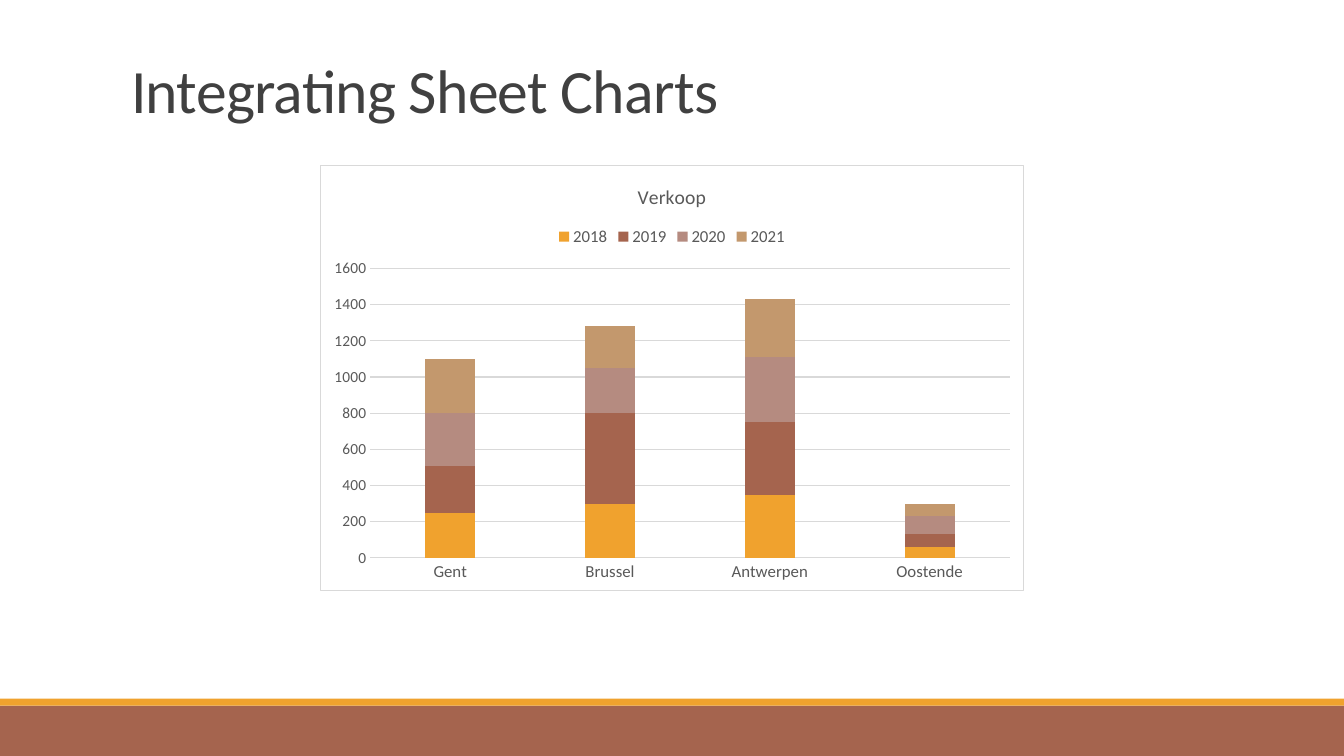
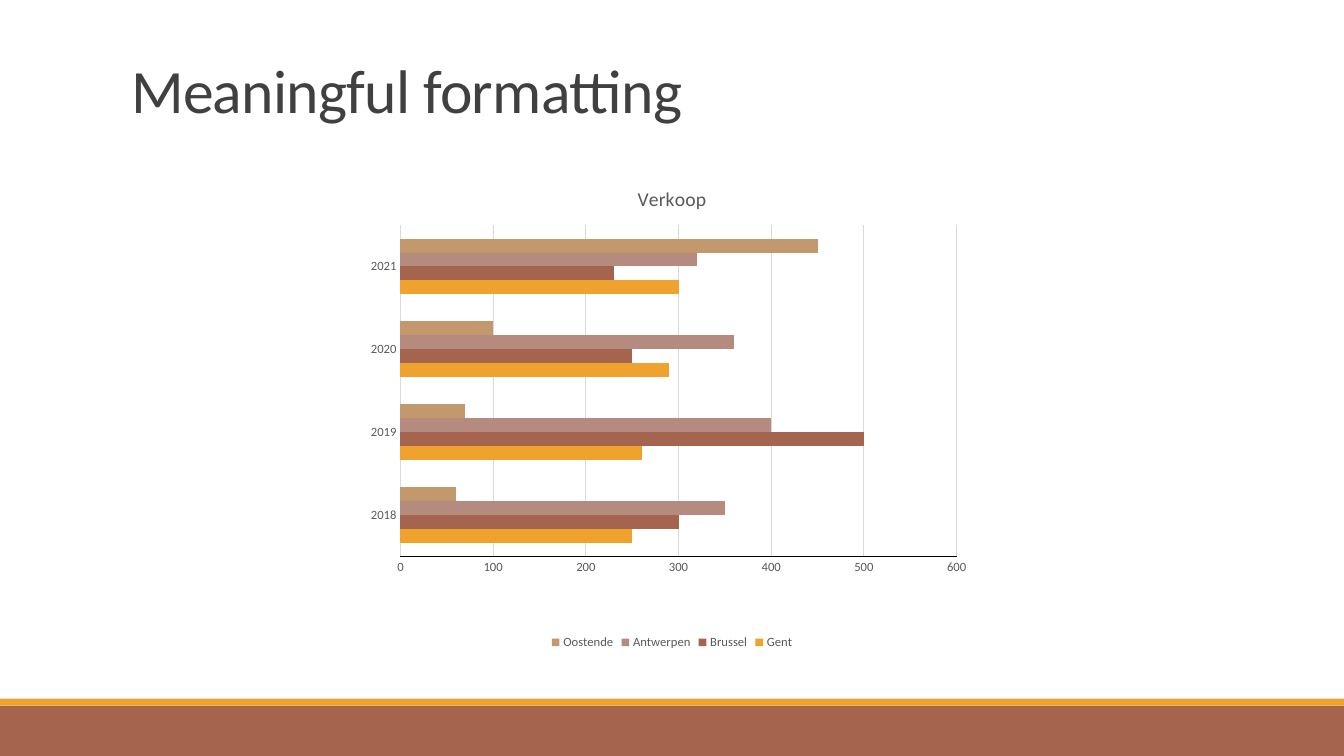
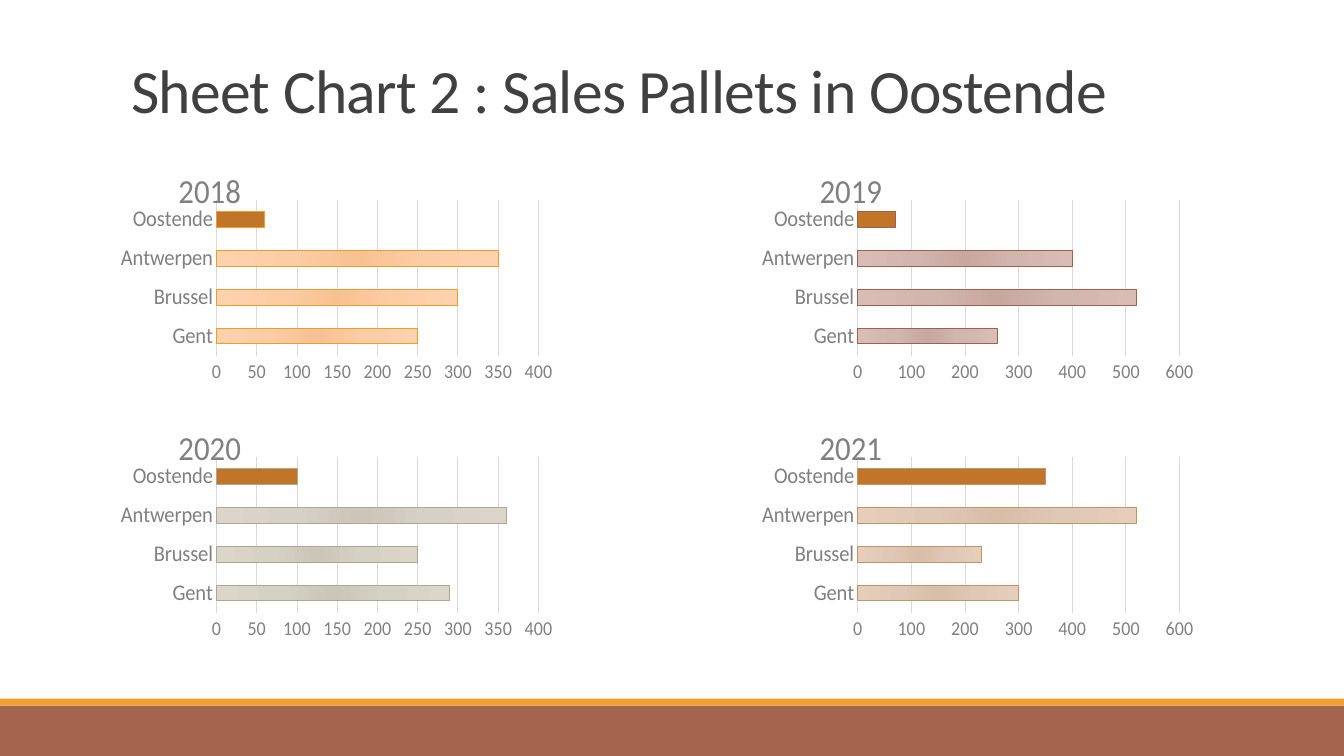
from pptx import Presentation
from pptx.chart.data import CategoryChartData
from pptx.dml.color import RGBColor
from pptx.enum.chart import XL_CHART_TYPE, XL_LEGEND_POSITION, XL_TICK_MARK
from pptx.enum.shapes import MSO_SHAPE
from pptx.enum.text import MSO_ANCHOR, MSO_AUTO_SIZE, PP_ALIGN
from pptx.oxml import parse_xml
from pptx.oxml.ns import nsdecls, qn
from pptx.util import Pt

WIDE, HIGH = 960, 540
FACE = "Calibri"
HUES = {
    "white": "FFFFFF", "black": "000000", "title": "404040",
    "text": "595959", "soft": "808080", "grid": "D9D9D9",
    "gold": "F0A22E", "rust": "A5644E", "rose": "B58B80", "tan": "C3986D",
    "accent": "C17529",
}
SERIES = ("gold", "rust", "rose", "tan")
TOWNS = ("Gent", "Brussel", "Antwerpen", "Oostende")
YEARS = ("2018", "2019", "2020", "2021")


def rgb(hue):
    return RGBColor.from_string(HUES.get(hue, hue))


def style(font, size, hue):
    font.name, font.size, font.bold = FACE, Pt(size), False
    font.color.rgb = rgb(hue)


def write(frame, text, size=14, hue="text", lead=None, space=None, align=None):
    """Set the text of a frame; lead is line spacing, space is tracking in points."""
    para = frame.paragraphs[0]
    run = para.add_run()
    run.text = text
    style(run.font, size, hue)
    if lead:
        para.line_spacing = lead
    if align is not None:
        para.alignment = align
    if space:
        run.font._element.set("spc", str(int(space * 100)))


def stroke(line, hue):
    """Draw a thin line, or none when no hue is given."""
    if hue:
        line.color.rgb = rgb(hue)
        line.width = Pt(0.75)
    else:
        line.fill.background()


def pin(node, index, target=None, **spots):
    """Give a chart part a manual layout in fractions of the chart."""
    for old in node.findall(qn("c:layout")):
        node.remove(old)
    inner = f'<c:layoutTarget val="{target}"/>' if target else ""
    inner += '<c:xMode val="edge"/><c:yMode val="edge"/>'
    inner += "".join(f'<c:{key} val="{val}"/>' for key, val in spots.items())
    node.insert(index, parse_xml(
        f'<c:layout {nsdecls("c")}><c:manualLayout>{inner}'
        "</c:manualLayout></c:layout>"))


def glow(series, hues):
    """Fill a series with a circular gradient."""
    stops = "".join(
        f'<a:gs pos="{pos}"><a:srgbClr val="{hue}"/></a:gs>'
        for pos, hue in zip((0, 45000, 100000), hues))
    rect = " ".join(f'{side}="100000"' for side in "ltrb")
    series._element.get_or_add_spPr().insert(0, parse_xml(
        f'<a:gradFill {nsdecls("a")}><a:gsLst>{stops}</a:gsLst>'
        f'<a:path path="circle"><a:fillToRect {rect}/></a:path></a:gradFill>'))


class Deck:
    def __init__(self):
        self.show = Presentation()
        self.show.slide_width, self.show.slide_height = Pt(WIDE), Pt(HIGH)
        self.slide = None

    def page(self, title):
        self.slide = self.show.slides.add_slide(self.show.slide_layouts[5])
        self.band(504, 36, "rust")
        self.band(499, 5, "gold")
        self.title(title)

    def band(self, top, high, hue):
        bar = self.slide.shapes.add_shape(
            MSO_SHAPE.RECTANGLE, 0, Pt(top), Pt(WIDE), Pt(high))
        bar.shadow.inherit = False
        bar.fill.solid()
        bar.fill.fore_color.rgb = rgb(hue)
        bar.line.fill.background()

    def title(self, text):
        box = self.slide.shapes.title
        box.left, box.top, box.width, box.height = map(Pt, (86.4, 22.6, 792, 71))
        frame = box.text_frame
        frame.word_wrap = True
        frame.auto_size = MSO_AUTO_SIZE.NONE
        frame.vertical_anchor = MSO_ANCHOR.BOTTOM
        write(frame, text, size=44, hue="title", lead=0.85, space=-0.5,
              align=PP_ALIGN.LEFT)

    def chart(self, kind, box, cats, rows, title, gap, sizes, hue="text",
              head=14, base=None):
        """Add a chart; sizes are those of category and value labels."""
        data = CategoryChartData()
        data.categories = cats
        for name, vals in rows:
            data.add_series(name, vals)
        chart = self.slide.shapes.add_chart(kind, *map(Pt, box), data).chart
        style(chart.font, 10, "black")
        chart.has_title = True
        write(chart.chart_title.text_frame, title, size=head, hue=hue)
        chart.has_legend = False
        plot = chart.plots[0]
        plot.gap_width = gap
        plot.vary_by_categories = False
        axes = (chart.category_axis, chart.value_axis)
        for axis, size, line in zip(axes, sizes, ("grid", base)):
            axis.major_tick_mark = axis.minor_tick_mark = XL_TICK_MARK.NONE
            style(axis.tick_labels.font, size, hue)
            stroke(axis.format.line, line)
        chart.value_axis.has_major_gridlines = True
        stroke(chart.value_axis.major_gridlines.format.line, "grid")
        for series, tint in zip(plot.series, SERIES):
            series.format.fill.solid()
            series.format.fill.fore_color.rgb = rgb(tint)
        return chart

    def legend(self, chart, place, size):
        chart.has_legend = True
        chart.legend.position = place
        chart.legend.include_in_layout = False
        style(chart.legend.font, size, "text")

    def frame(self, chart):
        """Give the chart area a white fill and a thin border."""
        chart.element.find(qn("c:chart")).addnext(parse_xml(
            f'<c:spPr {nsdecls("c", "a")}>'
            f'<a:solidFill><a:srgbClr val="{HUES["white"]}"/></a:solidFill>'
            f'<a:ln w="{Pt(0.75)}"><a:solidFill><a:srgbClr val="{HUES["grid"]}"/>'
            "</a:solidFill></a:ln></c:spPr>"))

    def plot(self, chart, x, y, w, h):
        area = chart.element.find(".//" + qn("c:plotArea"))
        pin(area, 0, "inner", x=x, y=y, w=w, h=h)

    def panel(self, box, year, vals, edge, hues):
        """Add a one-year bar chart with its last town picked out."""
        chart = self.chart(
            XL_CHART_TYPE.BAR_STACKED, box, TOWNS, [("Series 1", vals)], year,
            gap=150, sizes=(16, 14), hue="soft", head=24)
        chart.plots[0].overlap = 100
        self.plot(chart, 0.15, 0.17, 0.81, 0.6)
        pin(chart.element.find(".//" + qn("c:title")), 1, x=0.04, y=0.02)
        series = chart.plots[0].series[0]
        series.format.fill.background()
        spot = series.points[len(TOWNS) - 1].format
        spot.fill.solid()
        spot.fill.fore_color.rgb = rgb("accent")
        for part in (series.format, spot):
            stroke(part.line, edge)
        props = series._element.get_or_add_spPr()
        props.remove(props.find(qn("a:noFill")))
        glow(series, hues)


def main():
    deck = Deck()

    deck.page("Integrating Sheet Charts")
    sales = ((250, 300, 350, 60), (260, 500, 400, 70),
             (290, 250, 360, 100), (300, 230, 320, 70))
    chart = deck.chart(
        XL_CHART_TYPE.COLUMN_STACKED, (228.5, 118, 503, 304), TOWNS,
        zip(YEARS, sales), "Verkoop", gap=219, sizes=(12, 11))
    chart.plots[0].overlap = 100
    deck.legend(chart, XL_LEGEND_POSITION.TOP, 12)
    deck.frame(chart)

    deck.page("Meaningful formatting")
    sales = ((250, 260, 290, 300), (300, 500, 250, 230),
             (350, 400, 360, 320), (60, 70, 100, 450))
    chart = deck.chart(
        XL_CHART_TYPE.BAR_CLUSTERED, (243.5, 119, 473, 348), YEARS,
        zip(TOWNS, sales), "Verkoop", gap=196, sizes=(9, 9), base="black")
    deck.plot(chart, 0.09, 0.12, 0.84, 0.68)
    deck.legend(chart, XL_LEGEND_POSITION.BOTTOM, 9)

    deck.page("Sheet Chart 2 : Sales Pallets in Oostende")
    panels = (
        ((250, 300, 350, 60), "EB9E2D", ("F8C192", "FCCCA5", "FFD2AE")),
        ((260, 520, 400, 70), "A1624C", ("C8A79F", "D1B5AF", "D9BCB5")),
        ((290, 250, 360, 100), "AEA68F", ("CCC6B9", "D6D1C5", "DCD6CA")),
        ((300, 230, 520, 350), "BF956B", ("D8BDA7", "E0C8B6", "E7CEBB")),
    )
    for num, (year, panel) in enumerate(zip(YEARS, panels)):
        row, col = divmod(num, 2)
        deck.panel((86.4 + 458 * col, 111.6 + 183.6 * row, 309.6, 185),
                   year, *panel)

    deck.show.save("out.pptx")


if __name__ == "__main__":
    main()
